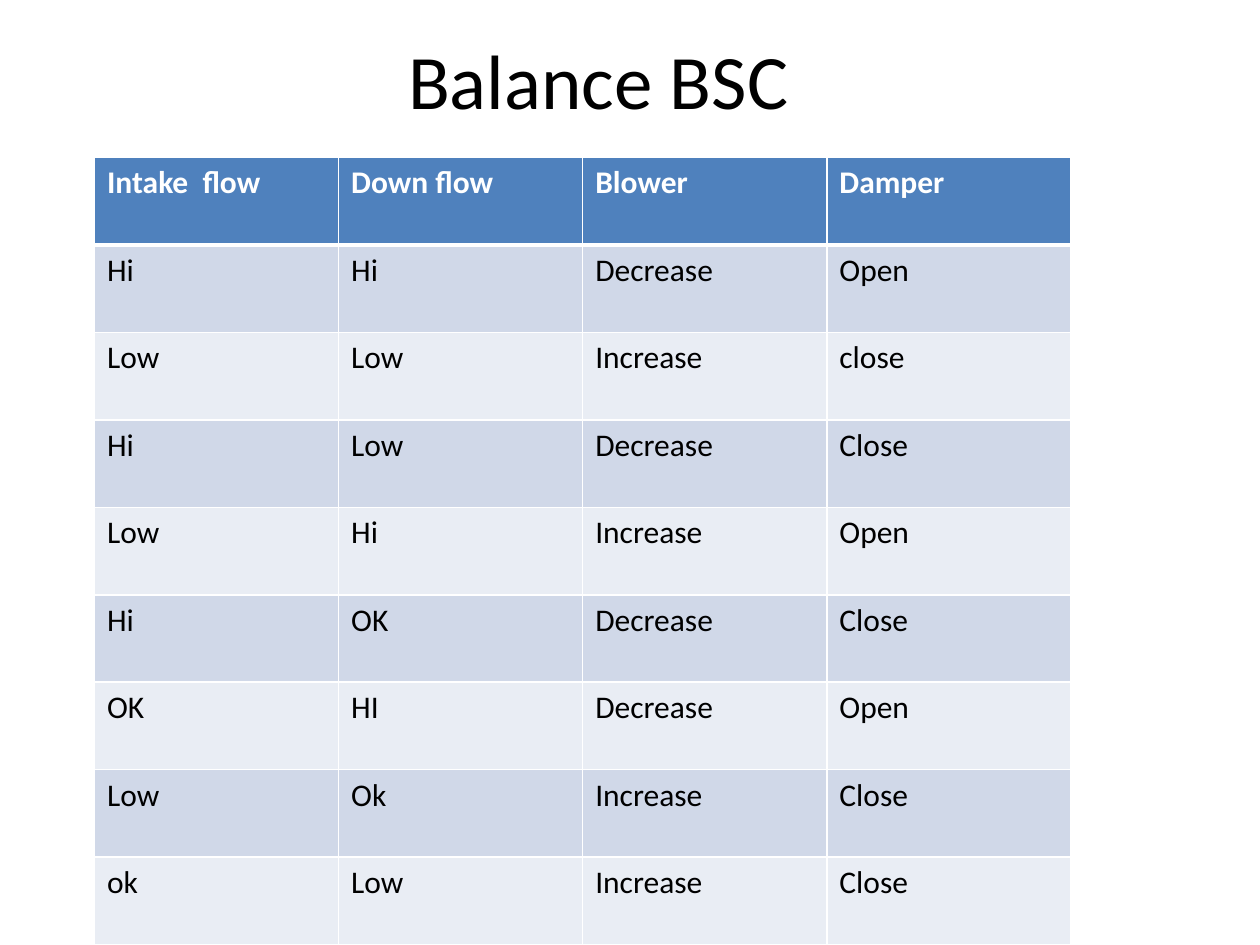
from dataclasses import dataclass

import pptx
import pptx.dml.color
import pptx.enum.text
import pptx.oxml
import pptx.oxml.ns
import pptx.util
from pptx.util import Inches

FONT = "Calibri"
COLORS = {
    "header": "4F81BD",
    "odd_band": "D0D8E8",
    "even_band": "E9EDF4",
    "white": "FFFFFF",
    "black": "000000",
}
ROWS = [
    ("Intake  flow", "Down flow", "Blower", "Damper"),
    ("Hi", "Hi", "Decrease", "Open"),
    ("Low", "Low", "Increase", "close"),
    ("Hi", "Low", "Decrease", "Close"),
    ("Low", "Hi", "Increase", "Open"),
    ("Hi", "OK", "Decrease", "Close"),
    ("OK", "HI", "Decrease", "Open"),
    ("Low", "Ok", "Increase", "Close"),
    ("ok", "Low", "Increase", "Close"),
]


@dataclass(frozen=True)
class RowStyle:
    fill: str
    text: str
    bold: bool
    top: float  # border widths in points
    bottom: float


HEADER = RowStyle("header", "white", True, 1, 3)
FIRST_BODY = RowStyle("odd_band", "black", False, 3, 1)
ODD_BODY = RowStyle("odd_band", "black", False, 1, 1)
EVEN_BODY = RowStyle("even_band", "black", False, 1, 1)


def row_style(index: int) -> RowStyle:
    if index < 2:
        return (HEADER, FIRST_BODY)[index]
    return ODD_BODY if index % 2 else EVEN_BODY


def rgb(name: str) -> pptx.dml.color.RGBColor:
    return pptx.dml.color.RGBColor.from_string(COLORS[name])


def set_font(paragraph, size: float, color: str, bold: bool = False) -> None:
    font = paragraph.font
    font.name = FONT
    font.size = pptx.util.Pt(size)
    font.bold = bold
    font.color.rgb = rgb(color)


def add_border(cell, side: str, width: float) -> None:
    namespace = pptx.oxml.ns.nsdecls("a")
    line = pptx.oxml.parse_xml(
        f'<a:ln{side} {namespace} w="{pptx.util.Pt(width)}"><a:solidFill>'
        f'<a:srgbClr val="{COLORS["white"]}"/></a:solidFill></a:ln{side}>'
    )
    cell._tc.get_or_add_tcPr().append(line)


def fill_cell(cell, text: str, style: RowStyle) -> None:
    cell.text = text
    set_font(cell.text_frame.paragraphs[0], 18, style.text, style.bold)
    widths = {"L": 1, "R": 1, "T": style.top, "B": style.bottom}
    for side, width in widths.items():
        add_border(cell, side, width)
    cell.fill.solid()
    cell.fill.fore_color.rgb = rgb(style.fill)


def add_title(slide, text: str) -> None:
    shape = slide.shapes.add_textbox(Inches(0.25), Inches(0), Inches(9), Inches(1.25))
    frame = shape.text_frame
    frame.word_wrap = True
    frame.vertical_anchor = pptx.enum.text.MSO_ANCHOR.MIDDLE
    paragraph = frame.paragraphs[0]
    paragraph.text = text
    paragraph.alignment = pptx.enum.text.PP_ALIGN.CENTER
    set_font(paragraph, 44, "black")


def add_balance_table(slide) -> None:
    table = slide.shapes.add_table(
        len(ROWS), len(ROWS[0]), Inches(0.75), Inches(1.25), Inches(7.75), Inches(6.25)
    ).table
    for row_index, texts in enumerate(ROWS):
        for column_index, text in enumerate(texts):
            fill_cell(table.cell(row_index, column_index), text, row_style(row_index))


def main() -> None:
    presentation = pptx.Presentation()
    presentation.slide_width = Inches(10)
    presentation.slide_height = Inches(7.5)
    slide = presentation.slides.add_slide(presentation.slide_layouts[6])

    # Title
    add_title(slide, "Balance BSC")

    # Blower and damper action for each airflow reading
    add_balance_table(slide)

    presentation.save("out.pptx")


if __name__ == "__main__":
    main()
